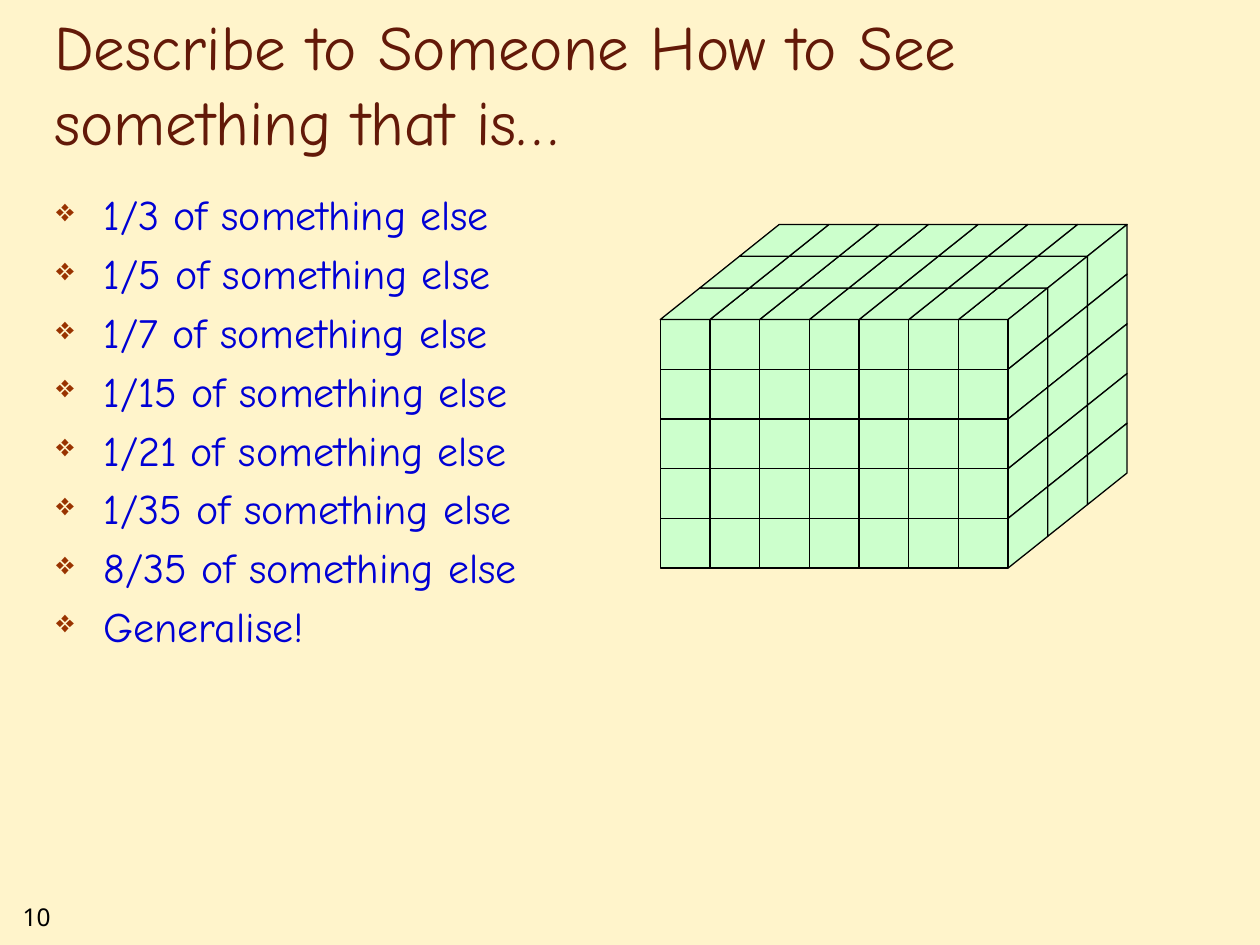
from lxml import etree
from pptx import Presentation
from pptx.dml.color import RGBColor
from pptx.enum.shapes import MSO_SHAPE as Preset
from pptx.enum.text import MSO_ANCHOR as Anchor
from pptx.oxml.ns import qn
from pptx.util import Pt

FRACTIONS = ["1/3", "1/5", "1/7", "1/15", "1/21", "1/35", "8/35"]
COLUMNS, ROWS, LAYERS = 7, 5, 3
CELL, SHIFT, RISE = 28.4, 22.65, 18.1
FRONT_LEFT, FRONT_TOP = 377.3, 182.6


def color(value):
    return RGBColor.from_string(value)


class SlideBuilder:
    """Holds the style and the current slide, and draws each kind of element."""

    font = "Comic Neue"
    title_color, body_color, bullet_color = "631908", "0000D4", "993300"
    cell_fill, cell_line = "CCFFCC", "000000"

    def __init__(self, page):
        self.page = page

    def background(self, value, opacity):
        fill = self.page.background.fill
        fill.solid()
        fill.fore_color.rgb = color(value)
        tint = self.page.background._cSld.find(".//" + qn("a:srgbClr"))
        etree.SubElement(tint, qn("a:alpha"), val=str(opacity * 1000))

    def text(self, lines, frame, size, value, font=None, before=0, anchor=Anchor.TOP):
        box = self.page.shapes.add_textbox(*map(Pt, frame))
        text_frame = box.text_frame
        text_frame.word_wrap = True
        text_frame.vertical_anchor = anchor
        for index, line in enumerate(lines):
            para = text_frame.add_paragraph() if index else text_frame.paragraphs[0]
            para.text = line
            para.space_before = Pt(before)
            for span in para.runs:
                span.font.name = font or self.font
                span.font.size = Pt(size)
                span.font.color.rgb = color(value)
        return text_frame

    def bullets(self, lines, frame, size):
        text_frame = self.text(lines, frame, size, self.body_color, before=size * 0.2)
        for para in text_frame.paragraphs:
            props = para._p.get_or_add_pPr()
            props.set("marL", str(Pt(27)))
            props.set("indent", str(Pt(-27)))
            tint = etree.SubElement(props, qn("a:buClr"))
            etree.SubElement(tint, qn("a:srgbClr"), val=self.bullet_color)
            etree.SubElement(props, qn("a:buSzPct"), val="75000")
            etree.SubElement(props, qn("a:buChar"), char="❖")

    def group(self):
        return self.page.shapes.add_group_shape()

    def cell(self, group, preset, left, top, width, height, slant=None):
        shape = group.shapes.add_shape(preset, *map(Pt, (left, top, width, height)))
        shape.shadow.inherit = False
        shape.fill.solid()
        shape.fill.fore_color.rgb = color(self.cell_fill)
        shape.line.color.rgb = color(self.cell_line)
        shape.line.width = Pt(0.75)
        if slant:
            shape.adjustments[0] = slant
        return shape

    def front_cell(self, group, column, row):
        left, top = FRONT_LEFT + column * CELL, FRONT_TOP + row * CELL
        self.cell(group, Preset.RECTANGLE, left, top, CELL, CELL)

    def top_cell(self, group, column, layer):
        left = FRONT_LEFT + column * CELL + layer * SHIFT
        top = FRONT_TOP - (layer + 1) * RISE
        self.cell(group, Preset.PARALLELOGRAM, left, top, CELL + SHIFT, RISE, SHIFT / RISE)

    def side_cell(self, group, row, layer):
        length = CELL + RISE
        center_x = FRONT_LEFT + COLUMNS * CELL + (layer + 0.5) * SHIFT
        center_y = FRONT_TOP + row * CELL - (layer + 1) * RISE + length / 2
        shape = self.cell(group, Preset.PARALLELOGRAM, center_x - length / 2,
                          center_y - SHIFT / 2, length, SHIFT, RISE / SHIFT)
        shape.rotation = 270
        shape._element.spPr.find(qn("a:xfrm")).set("flipV", "1")

    def block(self):
        front = self.group()
        for row in reversed(range(ROWS)):
            for column in range(COLUMNS):
                self.front_cell(front, column, row)
        for layer in range(LAYERS):
            lid = self.group()
            for column in reversed(range(COLUMNS)):
                self.top_cell(lid, column, layer)
        for row in range(ROWS):
            side = self.group()
            for layer in range(LAYERS):
                self.side_cell(side, row, layer)


def main():
    deck = Presentation()
    deck.slide_width, deck.slide_height = Pt(720), Pt(540)
    builder = SlideBuilder(deck.slides.add_slide(deck.slide_layouts[6]))
    builder.background("FFF2C0", 82)
    builder.text(["10"], (5.8, 512, 54, 24.5), 14, "000000", font="Noto Sans", before=7)
    builder.text(["Describe to Someone How to See\nsomething that is…"],
                 (24, 12, 612, 82), 36, builder.title_color, anchor=Anchor.BOTTOM)
    lines = [f"{fraction} of something else" for fraction in FRACTIONS]
    builder.bullets(lines + ["Generalise!"], (25, 104.4, 340, 324), 24)
    builder.block()
    deck.save("out.pptx")


if __name__ == "__main__":
    main()
